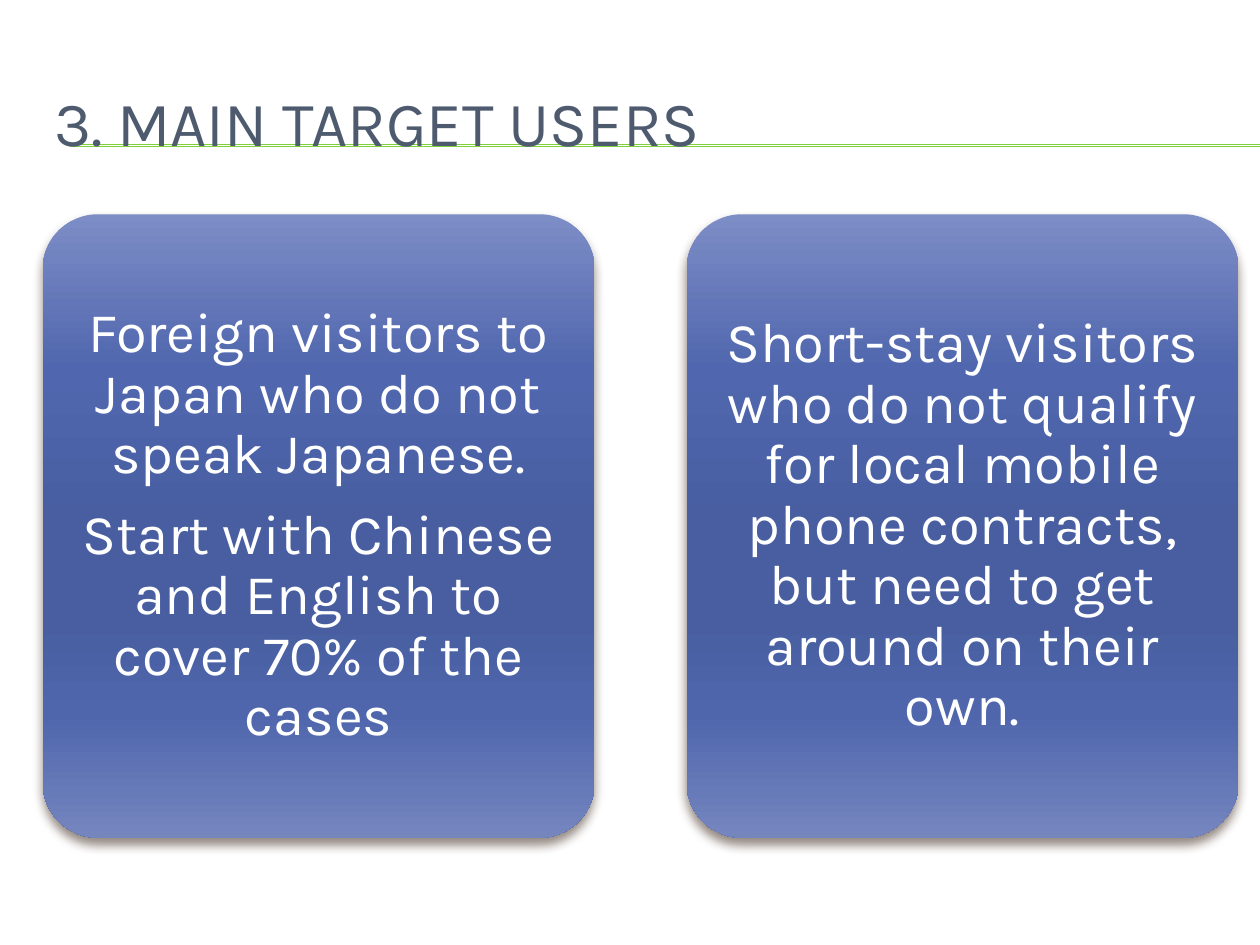
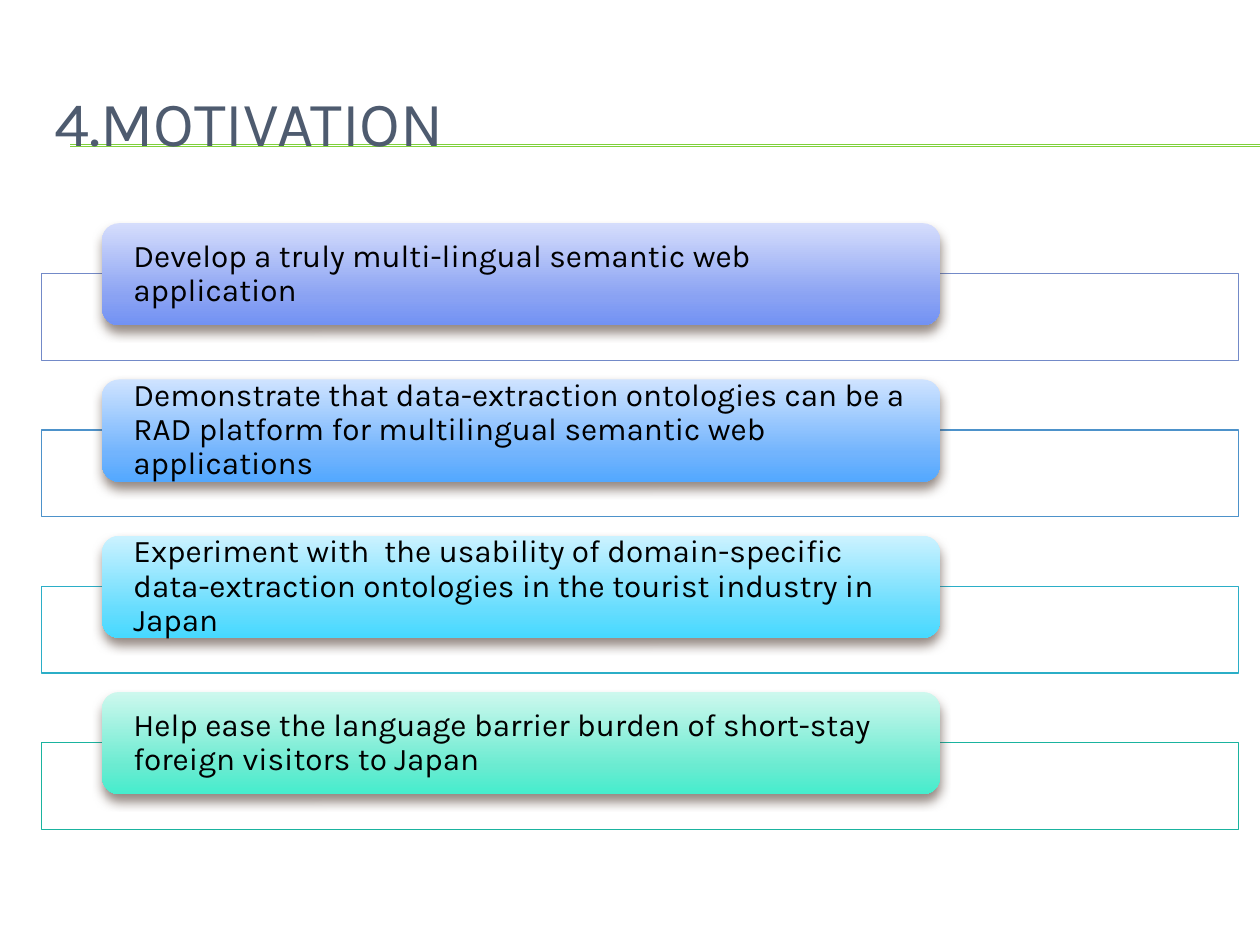
from lxml.etree import SubElement
from pptx import Presentation
from pptx.dml.color import RGBColor
from pptx.enum.shapes import MSO_CONNECTOR as CONNECTOR, MSO_SHAPE as SHAPE
from pptx.enum.text import MSO_ANCHOR as ANCHOR, MSO_AUTO_SIZE as AUTO_SIZE, PP_ALIGN as ALIGN
from pptx.oxml.ns import qn
from pptx.util import Cm, Pt

FONT = "Karla"
TITLE_COLOR = "4E5B6F"
RULE_COLOR = "7FD13B"
SHADOW_COLOR = "4E3B30"
WHITE, BLACK = "FFFFFF", "000000"
PAGE_WIDTH, PAGE_HEIGHT = 25.4, 19.05

CARD_GRADIENT = [(0, "7D8DC6"), (25, "5066AE"), (50, "485EA1"),
                 (65, "485EA1"), (80, "4F66AD"), (100, "7586BF")]
TARGET_USERS = [
    ["Foreign visitors to Japan who do not speak Japanese.",
     "Start with Chinese and English to cover 70% of the cases"],
    ["Short-stay visitors who do not qualify for local mobile phone contracts, "
     "but need to get around on their own."],
]
# Text, frame line, then the top, middle and bottom colours of the label
MOTIVES = [
    ("Develop a truly multi-lingual semantic web application",
     "738AC8", ("D5DDFC", "8AA2F3", "7292F3")),
    ("Demonstrate that data-extraction ontologies can be a RAD platform "
     "for multilingual semantic web applications",
     "4D92CA", ("CFE3FF", "72B4FD", "53A8FF")),
    ("Experiment with  the usability of domain-specific data-extraction "
     "ontologies in the tourist industry in Japan",
     "2BAEC7", ("CCF2FF", "67DDFE", "46D9FF")),
    ("Help ease the language barrier burden of short-stay foreign visitors to Japan",
     "1AB39F", ("CEF8EE", "6BEBD1", "45EDCD")),
]


def rgb(value):
    return RGBColor.from_string(value)


def write_text(shape, paragraphs, size, color, align=ALIGN.LEFT,
               margins=(0.25, 0.13), line_spacing=1.0, space_after=0):
    """Fill the shape with paragraphs; margins are (sides, top and bottom) in cm."""
    frame = shape.text_frame
    frame.word_wrap = True
    frame.auto_size = AUTO_SIZE.NONE
    frame.vertical_anchor = ANCHOR.MIDDLE
    frame.margin_left = frame.margin_right = Cm(margins[0])
    frame.margin_top = frame.margin_bottom = Cm(margins[1])
    for index, text in enumerate(paragraphs):
        para = frame.add_paragraph() if index else frame.paragraphs[0]
        para.alignment = align
        para.line_spacing = line_spacing
        para.space_after = Pt(space_after)
        span = para.add_run()
        span.text = text
        span.font.name = FONT
        span.font.size = Pt(size)
        span.font.color.rgb = rgb(color)


def add_rule(page, y):
    """Draw a thin line behind the title, running off to the right edge."""
    rule = page.shapes.add_connector(
        CONNECTOR.STRAIGHT, Cm(1.42), Cm(y), Cm(PAGE_WIDTH), Cm(y))
    rule.line.color.rgb = rgb(RULE_COLOR)
    rule.line.width = Pt(0.75)
    SubElement(rule.element.spPr, qn("a:effectLst"))
    page.shapes.title.element.addprevious(rule.element)


def add_page(deck, heading):
    page = deck.slides.add_slide(deck.slide_layouts[5])
    title = page.shapes.title
    title.left, title.top, title.width, title.height = map(Cm, (0.84, 1.27, 24.13, 2.34))
    write_text(title, [heading], 36, TITLE_COLOR)
    for y in (2.92, 2.95):
        add_rule(page, y)
    return page


def add_box(page, kind, left, top, width, height):
    box = page.shapes.add_shape(kind, Cm(left), Cm(top), Cm(width), Cm(height))
    box.shadow.inherit = False
    return box


def fill_gradient(shape, stops):
    """Fill from top to bottom with (percent, colour) stops."""
    shape.fill.gradient()
    shape.fill.gradient_angle = 270
    stop_list = shape.element.spPr.find(".//" + qn("a:gsLst"))
    for stop in list(stop_list):
        stop_list.remove(stop)
    for percent, color in stops:
        stop = SubElement(stop_list, qn("a:gs"), pos=str(percent * 1000))
        SubElement(stop, qn("a:srgbClr"), val=color)


def add_drop_shadow(shape):
    effects = shape.element.spPr.find(qn("a:effectLst"))
    shadow = SubElement(effects, qn("a:outerShdw"), blurRad=str(Pt(6)), dist=str(Pt(4)),
                        dir="5400000", algn="ctr", rotWithShape="0")
    color = SubElement(shadow, qn("a:srgbClr"), val=SHADOW_COLOR)
    SubElement(color, qn("a:alpha"), val="60000")


def add_raised_box(page, left, top, width, height, stops):
    """Add a rounded box with a gradient and a drop shadow."""
    box = add_box(page, SHAPE.ROUNDED_RECTANGLE, left, top, width, height)
    fill_gradient(box, stops)
    box.line.fill.background()
    add_drop_shadow(box)
    return box


def add_user_card(page, left, paragraphs):
    card = add_raised_box(page, left, 4.32, 11.13, 12.57, CARD_GRADIENT)
    card.adjustments[0] = 0.1
    write_text(card, paragraphs, 32, WHITE, align=ALIGN.CENTER, margins=(0.33, 0.33),
               line_spacing=0.9, space_after=11.5)


def add_motive(page, top, text, line_color, label_colors):
    frame = add_box(page, SHAPE.RECTANGLE, 0.84, top + 1.02, 24.13, 1.75)
    frame.fill.solid()
    frame.fill.fore_color.rgb = rgb(WHITE)
    frame.line.color.rgb = rgb(line_color)
    frame.line.width = Pt(0.79)
    label = add_raised_box(page, 2.06, top, 16.89, 2.06, zip((0, 72, 100), label_colors))
    write_text(label, [text], 18, BLACK, margins=(0.53, 0), line_spacing=0.9)


def main():
    deck = Presentation()
    deck.slide_width, deck.slide_height = Cm(PAGE_WIDTH), Cm(PAGE_HEIGHT)

    users_page = add_page(deck, "3. MAIN TARGET USERS")
    for column, paragraphs in enumerate(TARGET_USERS):
        add_user_card(users_page, 0.86 + column * 12.98, paragraphs)

    motivation_page = add_page(deck, "4.MOTIVATION")
    for row, motive in enumerate(MOTIVES):
        add_motive(motivation_page, 4.5 + row * 3.15, *motive)

    deck.save("out.pptx")


if __name__ == "__main__":
    main()
